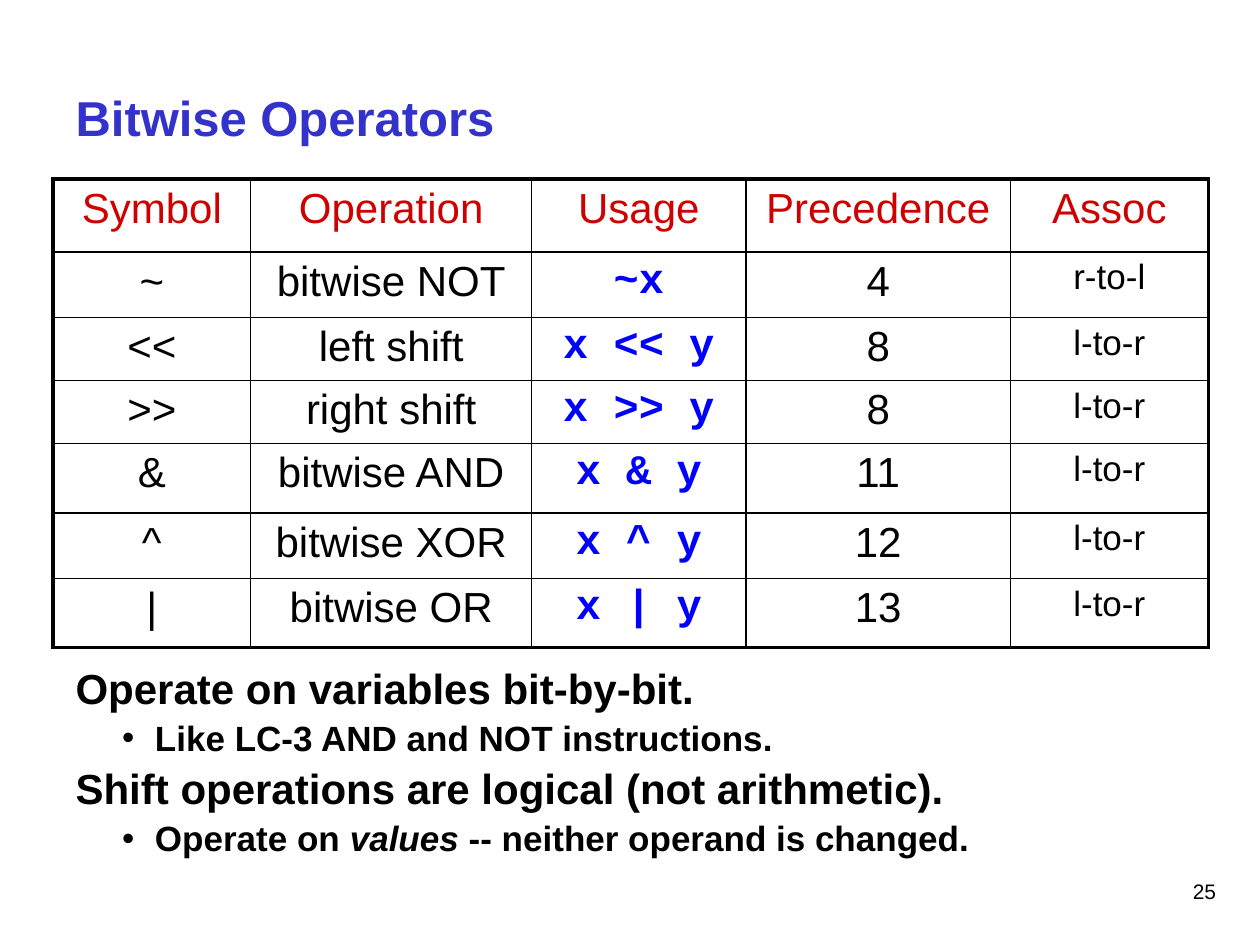
from lxml import etree
from pptx import Presentation
from pptx.dml.color import RGBColor
from pptx.enum.text import MSO_ANCHOR, MSO_AUTO_SIZE, PP_ALIGN
from pptx.oxml.ns import qn
from pptx.util import Inches, Pt

BLACK = RGBColor(0, 0, 0)
TITLE_BLUE = RGBColor(0x33, 0x33, 0xCC)
HEADER_RED = RGBColor(0xCE, 0, 0)
CODE_BLUE = RGBColor(0, 0, 0xFF)

HEADERS = ["Symbol", "Operation", "Usage", "Precedence", "Assoc"]
OPERATORS = [
    ["~", "bitwise NOT", "~x", "4", "r-to-l"],
    ["<<", "left shift", "x << y", "8", "l-to-r"],
    [">>", "right shift", "x >> y", "8", "l-to-r"],
    ["&", "bitwise AND", "x & y", "11", "l-to-r"],
    ["^", "bitwise XOR", "x ^ y", "12", "l-to-r"],
    ["|", "bitwise OR", "x | y", "13", "l-to-r"],
]
COLUMN_WIDTHS = [1.57, 2.23, 1.7, 2.1, 1.57]
ROW_HEIGHTS = [0.58, 0.52, 0.5, 0.5, 0.55, 0.52, 0.55]

# Each note: outline level, then its runs as (text, italic)
NOTES = [
    (0, [("Operate on variables bit-by-bit.", False)]),
    (1, [("Like LC-3 AND and NOT instructions.", False)]),
    (0, [("Shift operations are logical (not arithmetic).", False)]),
    (1, [("Operate on ", False), ("values", True),
         (" -- neither operand is changed.", False)]),
]


class SlideBuilder:
    font = "Arial"
    code_font = "Courier New"
    outer_border = 2.25
    inner_border = 1

    def __init__(self, presentation):
        self.slide = presentation.slides.add_slide(presentation.slide_layouts[1])

    def place(self, shape, left, top, width, height):
        shape.left, shape.top = Inches(left), Inches(top)
        shape.width, shape.height = Inches(width), Inches(height)

    def add_run(self, paragraph, text, size, color=BLACK, bold=False,
                italic=False, font=None):
        run = paragraph.add_run()
        run.text = text
        run.font.name = font or self.font
        run.font.size = Pt(size)
        run.font.bold = bold
        run.font.italic = italic
        run.font.color.rgb = color

    def title(self, text, *box):
        heading = self.slide.shapes.title
        self.place(heading, *box)
        frame = heading.text_frame
        frame.auto_size = MSO_AUTO_SIZE.NONE
        frame.vertical_anchor = MSO_ANCHOR.MIDDLE
        frame.paragraphs[0].alignment = PP_ALIGN.LEFT
        self.add_run(frame.paragraphs[0], text, 28, TITLE_BLUE, bold=True)

    def notes(self, items, *box):
        body = self.slide.placeholders[1]
        self.place(body, *box)
        frame = body.text_frame
        frame.auto_size = MSO_AUTO_SIZE.NONE
        for index, (level, runs) in enumerate(items):
            paragraph = frame.add_paragraph() if index else frame.paragraphs[0]
            paragraph.level = level
            paragraph.line_spacing = 0.9
            paragraph.space_before = Pt(4.5 if level else 5.5)
            self.set_bullet(paragraph, level)
            for text, italic in runs:
                self.add_run(paragraph, text, 20 if level else 24,
                             bold=True, italic=italic)

    def set_bullet(self, paragraph, level):
        properties = paragraph._p.get_or_add_pPr()
        properties.set("marL", str(Inches(0.63 if level else 0)))
        properties.set("indent", str(Inches(-0.26 if level else 0)))
        if level:
            etree.SubElement(properties, qn("a:buChar"), char="•")
        else:
            etree.SubElement(properties, qn("a:buNone"))

    def operator_table(self, rows, left, top):
        table = self.slide.shapes.add_table(
            len(rows), len(COLUMN_WIDTHS), Inches(left), Inches(top),
            Inches(sum(COLUMN_WIDTHS)), Inches(sum(ROW_HEIGHTS))).table
        table.first_row = table.horz_banding = False
        for column, width in zip(table.columns, COLUMN_WIDTHS):
            column.width = Inches(width)
        for row, height in zip(table.rows, ROW_HEIGHTS):
            row.height = Inches(height)
        last_row, last_column = len(rows) - 1, len(COLUMN_WIDTHS) - 1
        for r, row in enumerate(rows):
            for c, text in enumerate(row):
                cell = table.cell(r, c)
                cell.margin_left = cell.margin_right = Inches(0.05)
                cell.margin_top = cell.margin_bottom = Inches(0.05)
                self.set_borders(cell, {"lnL": c == 0, "lnR": c == last_column,
                                        "lnT": r == 0, "lnB": r == last_row})
                cell.fill.background()
                paragraph = cell.text_frame.paragraphs[0]
                paragraph.alignment = PP_ALIGN.CENTER
                self.add_run(paragraph, text, **self.cell_style(r, HEADERS[c]))

    def cell_style(self, row, header):
        if row == 0:
            return {"size": 24, "color": HEADER_RED}
        if header == "Usage":
            return {"size": 24, "color": CODE_BLUE, "bold": True,
                    "font": self.code_font}
        return {"size": 20 if header == "Assoc" else 24}

    def set_borders(self, cell, sides):
        """Draw each side, with the heavier line where it is on the table's edge."""
        properties = cell._tc.get_or_add_tcPr()
        for side, on_edge in sides.items():
            weight = self.outer_border if on_edge else self.inner_border
            line = etree.SubElement(properties, qn(f"a:{side}"), w=str(Pt(weight)))
            fill = etree.SubElement(line, qn("a:solidFill"))
            etree.SubElement(fill, qn("a:srgbClr"), val=str(BLACK))

    def page_number(self, text, *box):
        frame = self.slide.shapes.add_textbox(*map(Inches, box)).text_frame
        frame.word_wrap = True
        frame.paragraphs[0].alignment = PP_ALIGN.RIGHT
        self.add_run(frame.paragraphs[0], text, 12)


def main():
    presentation = Presentation()
    presentation.slide_width, presentation.slide_height = Inches(10), Inches(7.5)
    builder = SlideBuilder(presentation)
    builder.title("Bitwise Operators", 0.5, 0.3, 9, 1.25)
    builder.notes(NOTES, 0.5, 5.25, 9.5, 2.08)
    builder.operator_table([HEADERS] + OPERATORS, 0.42, 1.42)
    builder.page_number("25", 7.17, 6.92, 2.58, 0.42)
    presentation.save("out.pptx")


if __name__ == "__main__":
    main()
